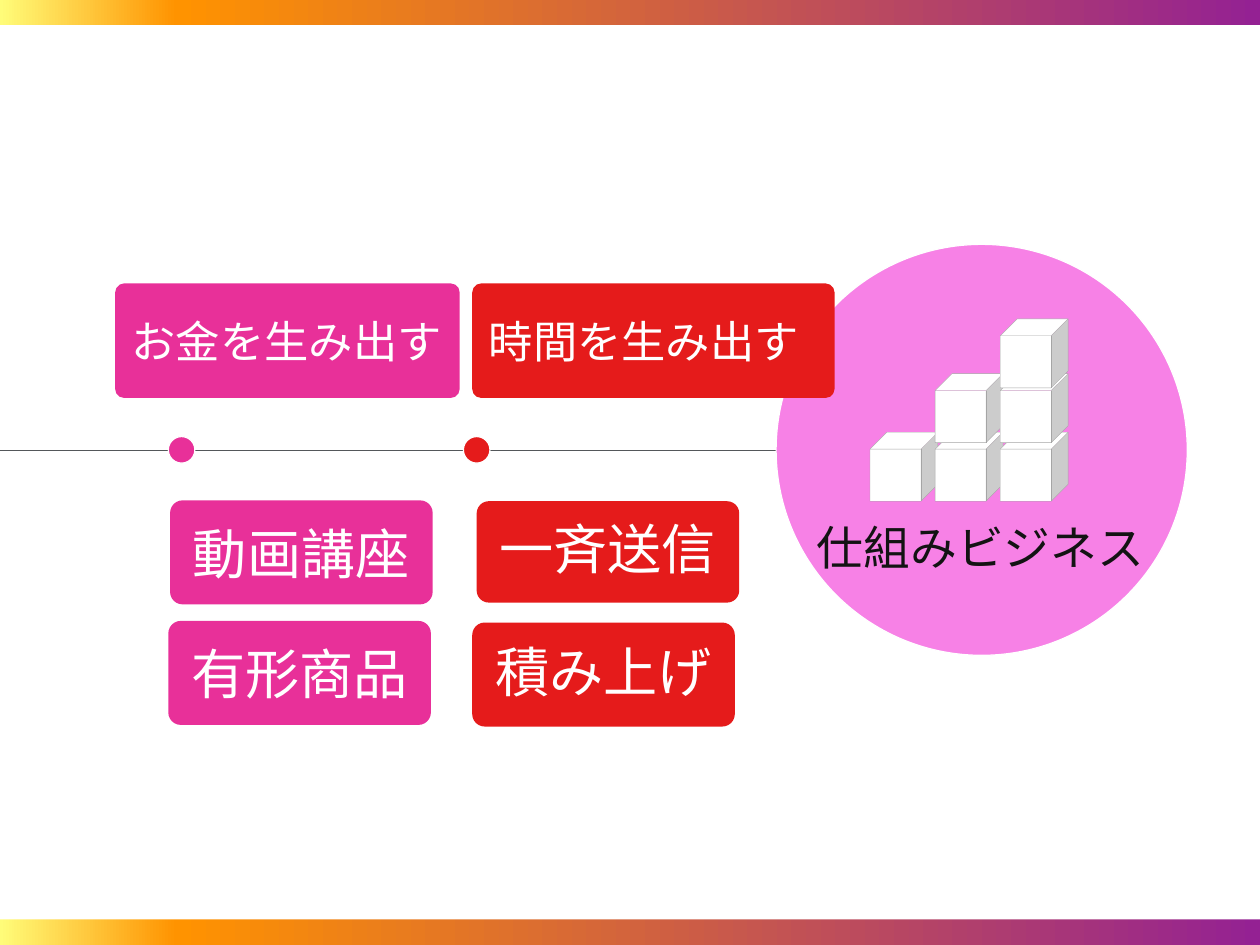
"""Build the slide on a business that runs itself, on a grid of 100 by 75 square cells."""
from dataclasses import dataclass

from lxml import etree
from pptx import Presentation
from pptx import util as u
from pptx.dml.color import RGBColor
from pptx.enum import shapes, text
from pptx.oxml.ns import qn


@dataclass(frozen=True)
class Theme:
    white: str = "FFFFFF"
    pink: str = "E83099"
    red: str = "E51B1B"
    circle: str = "F781E6"
    ink: str = "131313"
    axis: str = "53575A"
    edge: str = "A5A5A5"
    backdrop: tuple = ((0, "FFFC79"), (14, "FF9300"), (100, "942193"))
    font: str = "Noto Sans CJK JP"
    head_size: int = 36
    goal_size: int = 38
    card_size: int = 44


theme = Theme()
prs = Presentation()
prs.slide_width, prs.slide_height = u.Inches(14.22), u.Inches(10.67)
cell = prs.slide_width / 100
s = prs.slides.add_slide(prs.slide_layouts[6])


def add_shape(kind, box, fill, line=None, width=1):
    sp = s.shapes.add_shape(kind, *(round(n * cell) for n in box))
    sp.shadow.inherit = False
    sp.fill.solid()
    sp.fill.fore_color.rgb = RGBColor.from_string(fill)
    if line:
        sp.line.color.rgb = RGBColor.from_string(line)
        sp.line.width = u.Pt(width)
    else:
        sp.line.fill.background()
    return sp


def write(sp, words, size, color, align, inset, wrap=True):
    tf = sp.text_frame
    tf.text = words
    tf.word_wrap = wrap
    tf.vertical_anchor = text.MSO_ANCHOR.MIDDLE
    tf.margin_left = tf.margin_right = round(inset * cell)
    tf.margin_top = tf.margin_bottom = round(0.35 * cell)
    p = tf.paragraphs[0]
    p.alignment = align
    r = p.runs[0]
    r.font.size = u.Pt(size)
    r.font.name = theme.font
    r.font.color.rgb = RGBColor.from_string(color)
    etree.SubElement(r.font._element, qn("a:ea")).set("typeface", theme.font)
    return p


fill = s.background.fill
fill.gradient()
fill.gradient_angle = 0
stops = s.background._cSld.find(".//" + qn("a:gsLst"))
stops.clear()
for share, color in theme.backdrop:
    stop = etree.SubElement(stops, qn("a:gs"), pos=str(share * 1000))
    etree.SubElement(stop, qn("a:srgbClr"), val=color)

kinds = shapes.MSO_SHAPE
left, center = text.PP_ALIGN.LEFT, text.PP_ALIGN.CENTER
axis_y = 35.72
add_shape(kinds.RECTANGLE, (0, 2, 100, 71), theme.white)

axis = s.shapes.add_connector(
    shapes.MSO_CONNECTOR.STRAIGHT, 0, round(axis_y * cell), round(62 * cell), round(axis_y * cell))
axis.line.color.rgb = RGBColor.from_string(theme.axis)
axis.line.width = u.Pt(0.25)
etree.SubElement(axis._element.spPr, qn("a:effectLst"))

for x, size, color in ((13.36, 2.11, theme.pink), (36.78, 2.11, theme.red), (61.6, 32.63, theme.circle)):
    add_shape(kinds.OVAL, (x, axis_y - size / 2, size, size), color, theme.white)

for words, x, width, color in (("お金を生み出す", 9.14, 27.35, theme.pink),
                               ("時間を生み出す", 37.48, 28.76, theme.red)):
    head = add_shape(kinds.ROUNDED_RECTANGLE, (x, 22.5, width, 9.1), color)
    head.adjustments[0] = 0.08
    write(head, words, theme.head_size, theme.white, left, 1.1)

goal = s.shapes.add_textbox(*(round(n * cell) for n in (64.48, 40.43, 26.86, 6.05)))
write(goal, "仕組みビジネス", theme.goal_size, theme.ink, left, 0.35, wrap=False)

for level, y in enumerate((34.32, 29.67, 25.32)):
    for column in range(level, 3):
        add_shape(kinds.CUBE, (69.05 + 5.17 * column, y, 5.38, 5.48), theme.white, theme.edge, 0.25)

cards = (
    ("動画講座", 13.5, 39.73, 8.26, theme.pink, 1.0),
    ("有形商品", 13.36, 49.3, 8.26, theme.pink, 1.0),
    ("一斉送信", 37.83, 39.8, 8.05, theme.red, 0.9),
    ("積み上げ", 37.48, 49.43, 8.26, theme.red, 0.9),
)
for words, x, y, height, color, spacing in cards:
    card = add_shape(kinds.ROUNDED_RECTANGLE, (x, y, 20.84, height), color)
    card.adjustments[0] = 0.12
    write(card, words, theme.card_size, theme.white, center, 0.5).line_spacing = spacing

prs.save("out.pptx")
